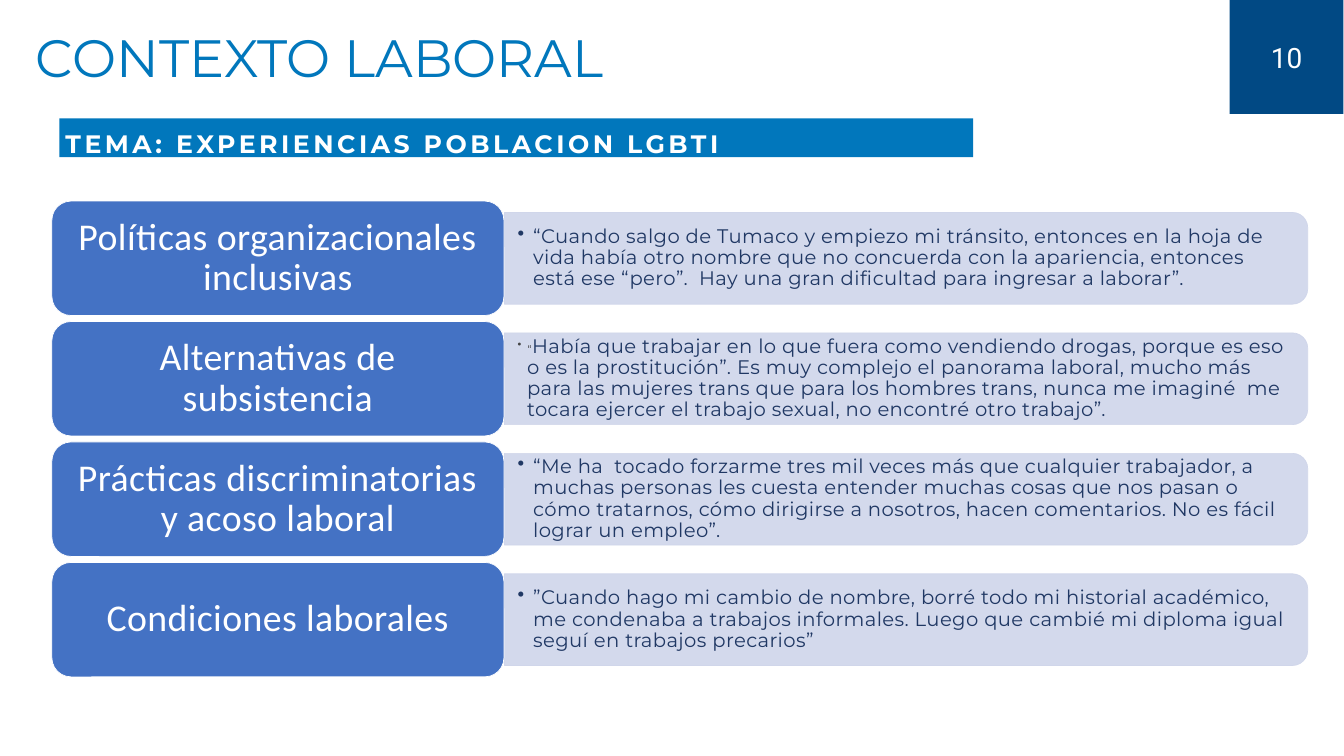
"""Build the slide on LGBTI experiences in the workplace: four themes, each with a quotation."""
from dataclasses import dataclass

from lxml import etree
from pptx import Presentation
from pptx.dml.color import RGBColor
from pptx.enum.shapes import MSO_SHAPE
from pptx.enum.text import MSO_ANCHOR, MSO_AUTO_SIZE, PP_ALIGN
from pptx.oxml.ns import qn
from pptx.util import Inches, Pt

RECTANGLE = MSO_SHAPE.RECTANGLE
ROUNDED = MSO_SHAPE.ROUNDED_RECTANGLE
ROUNDED_TOP = MSO_SHAPE.ROUND_2_SAME_RECTANGLE
TOP, MIDDLE = MSO_ANCHOR.TOP, MSO_ANCHOR.MIDDLE
LEFT, CENTER = PP_ALIGN.LEFT, PP_ALIGN.CENTER
FIT_SHAPE = MSO_AUTO_SIZE.SHAPE_TO_FIT_TEXT


@dataclass(frozen=True)
class Theme:
    blue: str = "0177BC"
    navy: str = "014984"
    label: str = "4472C4"
    panel: str = "CFD5EA"
    quote: str = "203864"
    gray: str = "454546"
    white: str = "FFFFFF"
    heading_font: str = "Montserrat"
    label_font: str = "Calibri"
    number_font: str = "Roboto"
    title_size: int = 75
    label_size: int = 54
    number_size: int = 40
    topic_size: int = 36
    quote_size: int = 28
    opener_size: int = 16


theme = Theme()


def add_block(kind, left, top, width, height, fill, outline=None):
    block = slide.shapes.add_shape(kind, Inches(left), Inches(top), Inches(width), Inches(height))
    block.shadow.inherit = False
    block.fill.solid()
    block.fill.fore_color.rgb = RGBColor.from_string(fill)
    if outline:
        block.line.color.rgb = RGBColor.from_string(outline)
        block.line.width = Pt(1)
    else:
        block.line.fill.background()
    return block


def write(shape, runs, inset_x, inset_y, anchor, align, line_spacing, tracking=0, bold=False):
    frame = shape.text_frame
    frame.word_wrap = True
    frame.vertical_anchor = anchor
    frame.margin_left = frame.margin_right = Inches(inset_x)
    frame.margin_top = frame.margin_bottom = Inches(inset_y)
    paragraph = frame.paragraphs[0]
    paragraph.alignment = align
    paragraph.line_spacing = line_spacing
    for text, font, size, color in runs:
        run = paragraph.add_run()
        run.text = text
        run.font.name = font
        run.font.size = Pt(size)
        run.font.bold = bold
        run.font.color.rgb = RGBColor.from_string(color)
        if tracking:
            run.font._element.set("spc", str(round(tracking * 100)))
    return paragraph


presentation = Presentation()
presentation.slide_width = Inches(26.67)
presentation.slide_height = Inches(15)
slide = presentation.slides.add_slide(presentation.slide_layouts[6])

experiences = [
    ("Políticas organizacionales inclusivas", "",
     "“Cuando salgo de Tumaco y empiezo mi tránsito, entonces en la hoja de vida había otro nombre "
     "que no concuerda con la apariencia, entonces está ese “pero”.  Hay una gran dificultad para "
     "ingresar a laborar”."),
    ("Alternativas de subsistencia", "“",
     "Había que trabajar en lo que fuera como vendiendo drogas, porque es eso o es la prostitución”. "
     "Es muy complejo el panorama laboral, mucho más para las mujeres trans que para los hombres "
     "trans, nunca me imaginé  me tocara ejercer el trabajo sexual, no encontré otro trabajo”."),
    ("Prácticas discriminatorias y acoso laboral", "",
     "“Me ha  tocado forzarme tres mil veces más que cualquier trabajador, a muchas personas les "
     "cuesta entender muchas cosas que nos pasan o cómo tratarnos, cómo dirigirse a nosotros, hacen "
     "comentarios. No es fácil lograr un empleo”."),
    ("Condiciones laborales", "",
     "”Cuando hago mi cambio de nombre, borré todo mi historial académico, me condenaba a trabajos "
     "informales. Luego que cambié mi diploma igual seguí en trabajos precarios”"),
]

first_top, row_pitch = 3.99, 2.39
label_left, label_width, label_height = 1.03, 8.97, 2.27
panel_left, panel_width, panel_height = 10.01, 15.94, 1.82
quote_width, quote_height = 15.86, 1.64

for row, (label, opener, quote) in enumerate(experiences):
    label_top = first_top + row * row_pitch
    center_y = label_top + label_height / 2

    panel = add_block(ROUNDED_TOP, panel_left + (panel_width - panel_height) / 2,
                      center_y - panel_width / 2, panel_height, panel_width,
                      theme.panel, theme.panel)
    panel.rotation = 90
    for color in panel._element.spPr.iter(qn("a:srgbClr")):
        etree.SubElement(color, qn("a:alpha"), val="90000")

    quote_box = slide.shapes.add_textbox(Inches(label_left + label_width),
                                         Inches(center_y - quote_height / 2),
                                         Inches(quote_width), Inches(quote_height))
    quote_runs = [(quote, theme.heading_font, theme.quote_size, theme.quote)]
    if opener:
        quote_runs.insert(0, (opener, theme.label_font, theme.opener_size, theme.gray))
    quotation = write(quote_box, quote_runs, 0.27, 0.14, MIDDLE, LEFT, 0.9, tracking=0.6)
    quotation.level = 1
    indent = Inches(0.19 if opener else 0.31)
    properties = quotation._p.get_or_add_pPr()
    properties.set("marL", str(indent))
    properties.set("indent", str(-indent))
    etree.SubElement(properties, qn("a:buChar"), char="•")

    label_block = add_block(ROUNDED, label_left, label_top, label_width, label_height,
                            theme.label, theme.white)
    write(label_block, [(label, theme.label_font, theme.label_size, theme.white)],
          0.23, 0.11, MIDDLE, CENTER, 0.9, tracking=0.6)

topic = add_block(RECTANGLE, 1.18, 2.35, 18.13, 0.77, theme.blue)
write(topic, [("TEMA: EXPERIENCIAS POBLACION LGBTI", theme.heading_font, theme.topic_size, theme.white)],
      0.12, 0.04, TOP, LEFT, 1.25, tracking=5, bold=True)
topic.text_frame.auto_size = FIT_SHAPE

page_number = add_block(RECTANGLE, 24.4, 0, 2.26, 2.26, theme.navy)
write(page_number, [("10", theme.number_font, theme.number_size, theme.white)],
      0.06, 0.06, MIDDLE, CENTER, 1.0)

title = slide.shapes.add_textbox(Inches(0.65), Inches(0.57), Inches(13.92), Inches(1.25))
write(title, [("CONTEXTO LABORAL", theme.heading_font, theme.title_size, theme.blue)],
      0.06, 0.06, TOP, LEFT, 0.9)
title.text_frame.auto_size = FIT_SHAPE

presentation.save("out.pptx")
